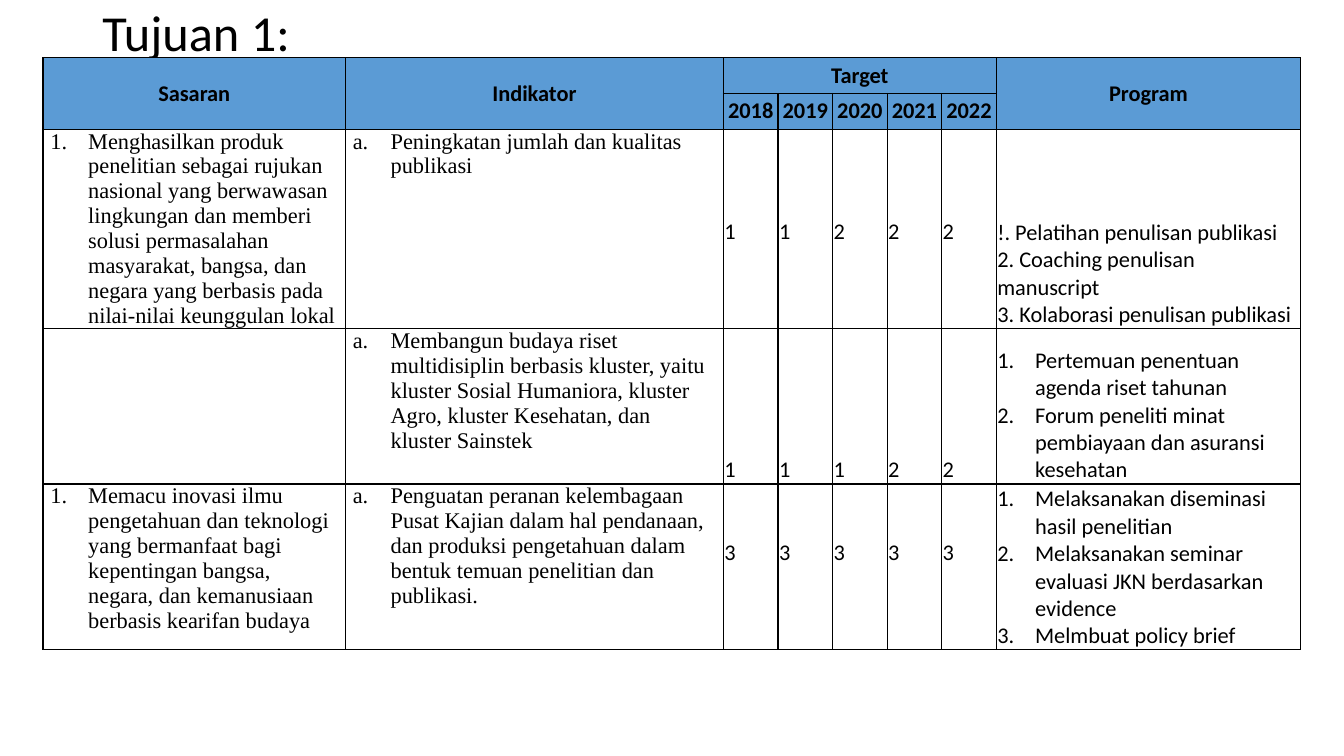
from dataclasses import dataclass

import pptx
import pptx.dml.color
import pptx.enum.text
import pptx.oxml
import pptx.oxml.ns
import pptx.util

PX = 9525
COLORS = {"text": "000000", "border": "000000", "header": "5B9BD5"}
SANS, SERIF = "Calibri", "Times New Roman"
ALIGN = pptx.enum.text.PP_ALIGN
ANCHOR = pptx.enum.text.MSO_ANCHOR
NUMBERS, LETTERS = "arabicPeriod", "alphaLcPeriod"

COLUMNS = [288, 360] + [52] * 5 + [290]
ROWS = [34, 34, 190, 148, 158]
YEARS = range(2018, 2023)


@dataclass
class CellStyle:
    font: str = SANS
    bold: bool = False
    align: ALIGN = ALIGN.LEFT
    anchor: ANCHOR = ANCHOR.BOTTOM
    side: int = 1
    bottom: int = 0
    numbering: str = ""
    space_after: int = 0


@dataclass
class Goal:
    sasaran: str
    indikator: str
    targets: list[int]
    program: list[str]
    program_numbering: str
    target_lift: int


HEADER = CellStyle(bold=True, align=ALIGN.CENTER, anchor=ANCHOR.MIDDLE)
SASARAN = CellStyle(font=SERIF, anchor=ANCHOR.TOP, side=7, numbering=NUMBERS)
INDIKATOR = CellStyle(font=SERIF, anchor=ANCHOR.TOP, side=7,
                      numbering=LETTERS, space_after=3)

GOALS = [
    Goal("Menghasilkan produk penelitian sebagai rujukan nasional yang berwawasan "
         "lingkungan dan memberi solusi permasalahan masyarakat, bangsa, dan negara "
         "yang berbasis pada nilai-nilai keunggulan lokal",
         "Peningkatan jumlah dan kualitas publikasi",
         [1, 1, 2, 2, 2],
         ["!. Pelatihan penulisan publikasi",
          "2. Coaching penulisan manuscript",
          "3. Kolaborasi penulisan publikasi"], "", 79),
    Goal("",
         "Membangun budaya riset multidisiplin berbasis kluster, yaitu kluster Sosial "
         "Humaniora, kluster Agro, kluster Kesehatan, dan kluster Sainstek",
         [1, 1, 1, 2, 2],
         ["Pertemuan penentuan agenda riset tahunan",
          "Forum peneliti minat pembiayaan dan asuransi kesehatan"], NUMBERS, 0),
    Goal("Memacu inovasi ilmu pengetahuan dan teknologi yang bermanfaat bagi "
         "kepentingan bangsa, negara, dan kemanusiaan berbasis kearifan budaya",
         "Penguatan peranan kelembagaan Pusat Kajian dalam hal pendanaan, dan produksi "
         "pengetahuan dalam bentuk temuan penelitian dan publikasi.",
         [3, 3, 3, 3, 3],
         ["Melaksanakan diseminasi hasil penelitian",
          "Melaksanakan seminar evaluasi JKN berdasarkan evidence",
          "Melmbuat policy brief"], NUMBERS, 79),
]


def rgb(name: str) -> pptx.dml.color.RGBColor:
    return pptx.dml.color.RGBColor.from_string(COLORS[name])


def set_font(p, name: str, size: int, bold: bool = False) -> None:
    p.font.name = name
    p.font.size = pptx.util.Pt(size)
    p.font.bold = bold
    p.font.color.rgb = rgb("text")


def add_borders(cell) -> None:
    tc_pr = cell._tc.get_or_add_tcPr()
    for side in ("lnL", "lnR", "lnT", "lnB"):
        tc_pr.append(pptx.oxml.parse_xml(
            f'<a:{side} {pptx.oxml.ns.nsdecls("a")} w="12700"><a:solidFill>'
            f'<a:srgbClr val="{COLORS["border"]}"/></a:solidFill></a:{side}>'))


def add_numbering(p, scheme: str) -> None:
    p_pr = p._p.get_or_add_pPr()
    p_pr.set("marL", str(36 * PX))
    p_pr.set("indent", str(-36 * PX))
    p_pr.append(pptx.oxml.parse_xml(
        f'<a:buAutoNum {pptx.oxml.ns.nsdecls("a")} type="{scheme}"/>'))


def fill_cell(cell, lines: list[str], style: CellStyle) -> None:
    cell.vertical_anchor = style.anchor
    cell.margin_left = cell.margin_right = style.side * PX
    cell.margin_top = 0
    cell.margin_bottom = style.bottom * PX
    tf = cell.text_frame
    tf.text = "\n".join(lines)
    for p in tf.paragraphs:
        if style.numbering and p.text:
            add_numbering(p, style.numbering)
        p.alignment = style.align
        if style.space_after:
            p.space_after = pptx.util.Pt(style.space_after)
        set_font(p, style.font, 16, style.bold)


def add_title(s) -> None:
    sp = s.shapes.title
    sp.left, sp.top, sp.width, sp.height = 88 * PX, 0, 1104 * PX, 68 * PX
    tf = sp.text_frame
    tf.auto_size = pptx.enum.text.MSO_AUTO_SIZE.NONE
    tf.vertical_anchor = ANCHOR.MIDDLE
    tf.text = "Tujuan 1:"
    p = tf.paragraphs[0]
    p.alignment = ALIGN.LEFT
    p.line_spacing = 0.9
    set_font(p, SANS, 36)


def add_goal_table(s) -> None:
    table = s.shapes.add_table(len(ROWS), len(COLUMNS), 41 * PX, 55 * PX,
                               sum(COLUMNS) * PX, sum(ROWS) * PX).table
    table.first_row = table.horz_banding = False
    for column, width in zip(table.columns, COLUMNS):
        column.width = width * PX
    for i, (row, height) in enumerate(zip(table.rows, ROWS)):
        row.height = height * PX
        for cell in row.cells:
            add_borders(cell)
            if i < 2:
                cell.fill.solid()
                cell.fill.fore_color.rgb = rgb("header")
            else:
                cell.fill.background()

    for col, label in ((0, "Sasaran"), (1, "Indikator"), (7, "Program")):
        table.cell(0, col).merge(table.cell(1, col))
        fill_cell(table.cell(0, col), [label], HEADER)
    table.cell(0, 2).merge(table.cell(0, 6))
    fill_cell(table.cell(0, 2), ["Target"], HEADER)
    for col, year in enumerate(YEARS, 2):
        fill_cell(table.cell(1, col), [str(year)], HEADER)

    for row, goal in enumerate(GOALS, 2):
        fill_cell(table.cell(row, 0), [goal.sasaran], SASARAN)
        fill_cell(table.cell(row, 1), [goal.indikator], INDIKATOR)
        for col, target in enumerate(goal.targets, 2):
            fill_cell(table.cell(row, col), [str(target)],
                      CellStyle(bottom=goal.target_lift))
        fill_cell(table.cell(row, 7), goal.program,
                  CellStyle(numbering=goal.program_numbering))


def main() -> None:
    prs = pptx.Presentation()
    prs.slide_width, prs.slide_height = 1280 * PX, 720 * PX
    s = prs.slides.add_slide(prs.slide_layouts[5])
    add_title(s)
    add_goal_table(s)
    prs.save("out.pptx")


if __name__ == "__main__":
    main()
